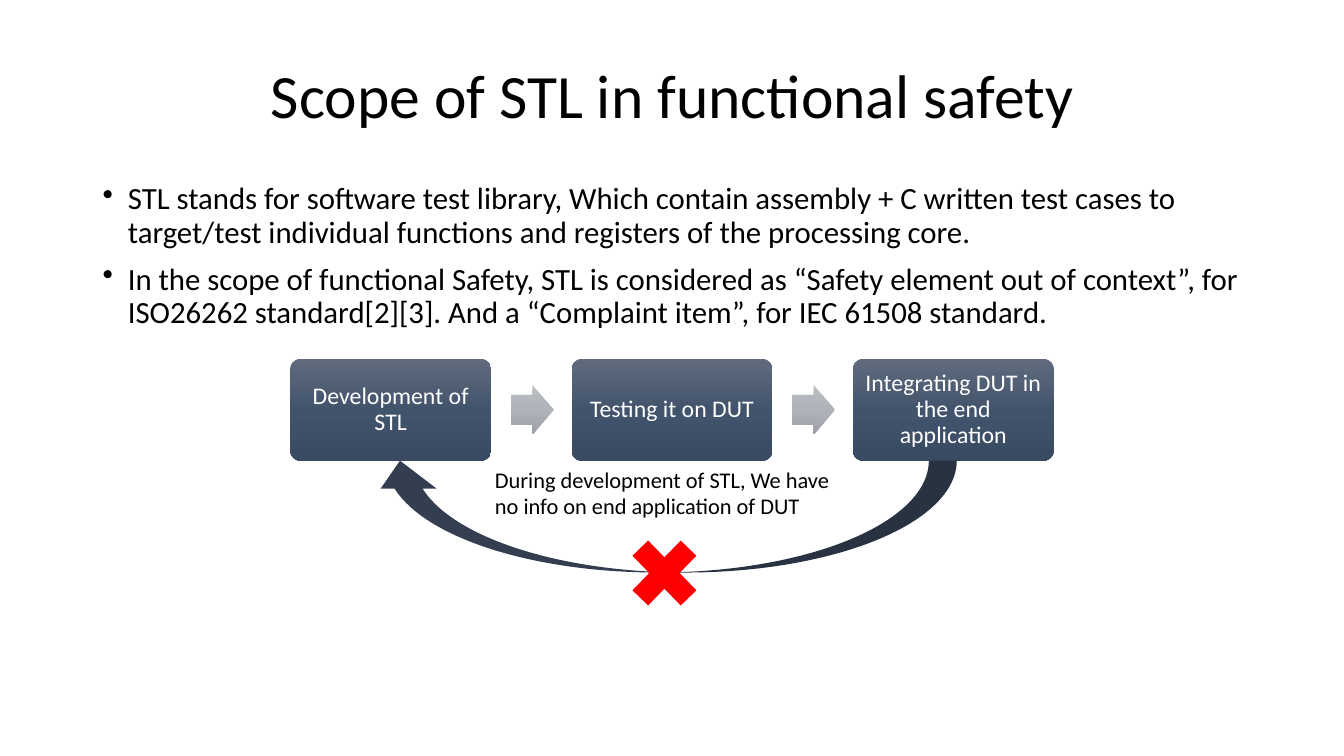
from copy import deepcopy

from pptx import Presentation
from pptx import util as u
from pptx.dml.color import RGBColor
from pptx.enum import shapes, text
from pptx.oxml import ns, xmlchemy

BLACK = RGBColor(0x00, 0x00, 0x00)
WHITE = RGBColor(0xFF, 0xFF, 0xFF)
RED = RGBColor(0xFF, 0x00, 0x00)
NAVY = RGBColor(0x33, 0x3F, 0x50)
SLATE = (RGBColor(0x60, 0x6B, 0x7D), RGBColor(0x42, 0x54, 0x6C), RGBColor(0x39, 0x4A, 0x62))
GREY = (RGBColor(0xBA, 0xBD, 0xC2), RGBColor(0xB0, 0xB3, 0xBA), RGBColor(0x9C, 0x9F, 0xA6))
KIND = shapes.MSO_SHAPE
ALIGN = text.PP_ALIGN
MIDDLE = text.MSO_ANCHOR.MIDDLE


class Deck:
    """Hold the style and the current slide."""

    def __init__(self):
        self.prs = Presentation()
        self.prs.slide_width = u.Inches(13.33)
        self.prs.slide_height = u.Inches(7.5)
        self.slide = self.prs.slides.add_slide(self.prs.slide_layouts[6])
        self.font = "Calibri"

    def fill_in(self, frame, lines, size, color=BLACK, align=ALIGN.LEFT,
                space=1.0, before=0, bullet=False):
        frame.word_wrap = True
        for i, line in enumerate(lines):
            para = frame.add_paragraph() if i else frame.paragraphs[0]
            if bullet:
                props = para._p.get_or_add_pPr()
                props.set("marL", str(u.Inches(0.25)))
                props.set("indent", str(u.Inches(-0.25)))
                mark = xmlchemy.OxmlElement("a:buChar")
                mark.set("char", "•")
                props.append(mark)
            para.alignment = align
            para.line_spacing = space
            para.space_before = u.Pt(before if i else 0)
            run = para.add_run()
            run.text = line
            run.font.name = self.font
            run.font.size = u.Pt(size)
            run.font.color.rgb = color

    def inset(self, frame, x, y):
        frame.margin_left = frame.margin_right = u.Inches(x)
        frame.margin_top = frame.margin_bottom = u.Inches(y)

    def label(self, box, lines, size, pad=(0.1, 0.05), anchor=text.MSO_ANCHOR.TOP, **look):
        frame = self.slide.shapes.add_textbox(*map(u.Inches, box)).text_frame
        self.inset(frame, *pad)
        frame.vertical_anchor = anchor
        self.fill_in(frame, lines, size, **look)

    def shape(self, kind, box, color, *adjust):
        item = self.slide.shapes.add_shape(kind, *map(u.Inches, box))
        item.shadow.inherit = False
        item.line.fill.background()
        for i, value in enumerate(adjust):
            item.adjustments[i] = value
        if isinstance(color, RGBColor):
            item.fill.solid()
            item.fill.fore_color.rgb = color
        else:
            self.blend(item, color)
        return item

    def blend(self, item, colors):
        item.fill.gradient()
        item.fill.gradient_angle = 270
        stops = next(item._element.spPr.iter(ns.qn("a:gsLst")))
        stops.append(deepcopy(stops[0]))
        for i, (stop, color) in enumerate(zip(item.fill.gradient_stops, colors)):
            stop.position = i / 2
            stop.color.rgb = color

    def step(self, box, words):
        item = self.shape(KIND.ROUNDED_RECTANGLE, box, SLATE, 0.1)
        frame = item.text_frame
        self.inset(frame, 0.07, 0.07)
        frame.vertical_anchor = MIDDLE
        self.fill_in(frame, [words], 17, WHITE, ALIGN.CENTER, 0.9)

    def flow(self, left, top, pitch, steps):
        for i, words in enumerate(steps):
            x = left + i * pitch
            if i:
                self.shape(KIND.RIGHT_ARROW, (x - 0.6, top + 0.26, 0.42, 0.49), GREY, 0.6, 0.5)
            self.step((x, top, 1.99, 1.01), words)

    def loop(self, box):
        item = self.shape(KIND.CURVED_UP_ARROW, box, NAVY)
        item._element.spPr.xfrm.set("flipH", "1")


def main():
    deck = Deck()
    deck.label((0.92, 0.4, 11.5, 1.16), ["Scope of STL in functional safety"], 44,
               anchor=MIDDLE, align=ALIGN.CENTER, space=0.9)
    deck.label((0.92, 1.77, 11.5, 4.51), [
        "STL stands for software test library, Which contain assembly + C written test cases "
        "to target/test individual functions and registers of the processing core.",
        "In the scope of functional Safety, STL is considered as “Safety element out of "
        "context”, for ISO26262 standard[2][3]. And a “Complaint item”, for IEC 61508 standard.",
    ], 22, space=0.9, before=10, bullet=True)
    deck.flow(2.88, 3.56, 2.79, ["Development of STL", "Testing it on DUT",
                                 "Integrating DUT in the end application"])
    deck.loop((3.69, 4.57, 5.8, 1.11))
    deck.shape(KIND.MATH_MULTIPLY, (6.13, 5.21, 0.92, 0.95), RED)
    deck.label((4.91, 4.62, 3.5, 0.54), [
        "During development of STL, We have no info on end application of DUT"], 16, pad=(0, 0))
    deck.prs.save("out.pptx")


if __name__ == "__main__":
    main()
